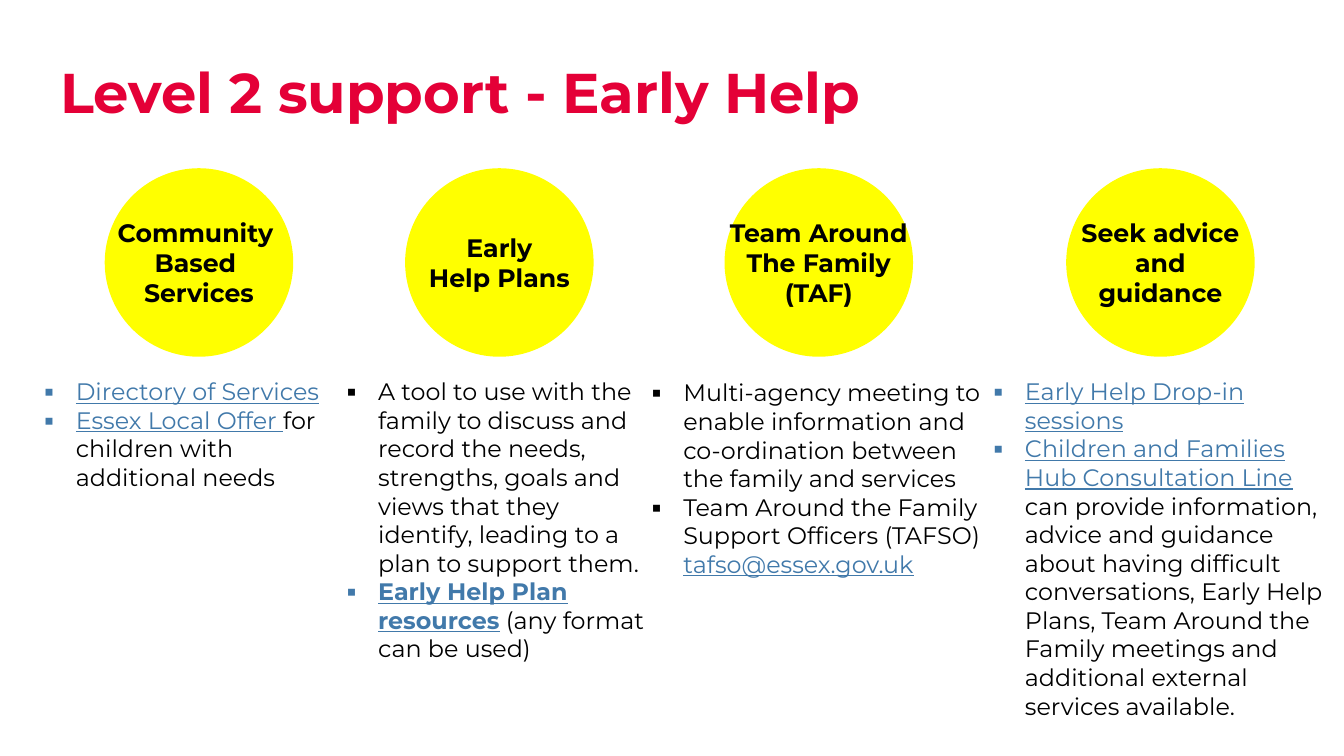
"""Build the Level 2 support slide: four yellow circles above bulleted notes."""
from dataclasses import dataclass

from lxml import etree
from pptx import Presentation
from pptx.dml.color import RGBColor
from pptx.enum.shapes import MSO_SHAPE
from pptx.enum.text import MSO_ANCHOR, MSO_AUTO_SIZE, PP_ALIGN
from pptx.oxml.ns import qn
from pptx.shapes.base import BaseShape
from pptx.slide import Slide
from pptx.text.text import Font, TextFrame, _Paragraph
from pptx.util import Cm, Pt

OVAL = MSO_SHAPE.OVAL
TOP, MIDDLE = MSO_ANCHOR.TOP, MSO_ANCHOR.MIDDLE
LEFT, CENTER = PP_ALIGN.LEFT, PP_ALIGN.CENTER
NO_FIT = MSO_AUTO_SIZE.NONE

RED = RGBColor(0xE4, 0x00, 0x37)
BLUE = RGBColor(0x41, 0x79, 0xAA)
BLACK = RGBColor(0, 0, 0)
YELLOW = RGBColor(0xFF, 0xFF, 0x00)
FACE = "Montserrat"
INDENT = Cm(0.79)


@dataclass
class Part:
    text: str
    link: bool = False
    bold: bool = False


@dataclass
class Column:
    label: str
    disc: float
    left: float
    width: float
    notes: list[list[Part]]
    top: float = 9.5


COLUMNS = [
    Column("Community \nBased \nServices", 2.64, 1.12, 7, [
        [Part("Directory of Services", link=True)],
        [Part("Essex Local Offer ", link=True),
         Part("for children with additional needs")],
    ]),
    Column("Early\nHelp Plans", 10.21, 8.74, 7.7, [
        [Part("A tool to use with the family to discuss and record the needs, "
              "strengths, goals and views that they identify, leading to a "
              "plan to support them.")],
        [Part("Early Help Plan resources", link=True, bold=True),
         Part(" (any format can be used)")],
    ]),
    Column("Team Around\nThe Family\n(TAF)", 18.26, 16.43, 8.43, [
        [Part("Multi-agency meeting to enable information and co-ordination "
              "between the family and services")],
        [Part("Team Around the Family Support Officers (TAFSO) "),
         Part("tafso@essex.gov.uk", link=True)],
    ], top=9.53),
    Column("Seek advice\nand\nguidance", 26.87, 25.04, 8.43, [
        [Part("Early Help Drop-in sessions", link=True)],
        [Part("Children and Families Hub Consultation Line ", link=True),
         Part("can provide information, advice and guidance about having "
              "difficult conversations, Early Help Plans, Team Around the "
              "Family meetings and additional external services available.")],
    ]),
]


def place(shape: BaseShape, left: float, top: float, width: float, height: float) -> None:
    shape.left, shape.top = Cm(left), Cm(top)
    shape.width, shape.height = Cm(width), Cm(height)


def style(font: Font, size: int, color: RGBColor, bold: bool) -> None:
    font.name, font.size, font.bold = FACE, Pt(size), bold
    font.color.rgb = color


def setup(frame: TextFrame) -> None:
    frame.margin_left = frame.margin_right = 0
    frame.margin_top = frame.margin_bottom = 0
    frame.word_wrap = True
    frame.auto_size = NO_FIT
    frame.vertical_anchor = TOP


def space(para: _Paragraph, align: PP_ALIGN) -> None:
    para.alignment = align
    para.line_spacing = 1.0
    para.space_before = para.space_after = Pt(0)


def bullet(para: _Paragraph) -> None:
    props = para._p.get_or_add_pPr()
    props.set("marL", str(INDENT))
    props.set("indent", str(-INDENT))
    etree.SubElement(props, qn("a:buFont")).set("typeface", FACE)
    etree.SubElement(props, qn("a:buChar")).set("char", "▪")


def add_title(slide: Slide) -> None:
    title = slide.shapes.title
    place(title, 1.52, 1.45, 20.57, 2.95)
    frame = title.text_frame
    setup(frame)
    frame.text = "Level 2 support - Early Help"
    para = frame.paragraphs[0]
    space(para, LEFT)
    style(para.runs[0].font, 40, RED, True)


def add_disc(slide: Slide, col: Column) -> None:
    disc = slide.shapes.add_shape(OVAL, Cm(col.disc), Cm(4.24), Cm(4.75), Cm(4.75))
    disc.shadow.inherit = False
    disc.fill.solid()
    disc.fill.fore_color.rgb = YELLOW
    disc.line.fill.background()
    frame = disc.text_frame
    frame.word_wrap = False
    frame.vertical_anchor = MIDDLE
    frame.text = col.label
    for para in frame.paragraphs:
        space(para, CENTER)
        style(para.runs[0].font, 18, BLACK, True)


def add_notes(box: BaseShape, col: Column) -> None:
    place(box, col.left, col.top, col.width, 5.46)
    frame = box.text_frame
    setup(frame)
    for index, note in enumerate(col.notes):
        para = frame.add_paragraph() if index else frame.paragraphs[0]
        space(para, LEFT)
        bullet(para)
        for part in note:
            run = para.add_run()
            run.text = part.text
            style(run.font, 17, BLUE if part.link else BLACK, part.bold)
            run.font.underline = part.link


def main() -> None:
    deck = Presentation()
    deck.slide_width, deck.slide_height = Cm(33.87), Cm(19.05)
    slide = deck.slides.add_slide(deck.slide_layouts[1])
    add_title(slide)
    for index, col in enumerate(COLUMNS):
        box = slide.shapes.add_textbox(0, 0, 0, 0) if index else slide.placeholders[1]
        add_notes(box, col)
    for col in COLUMNS:
        add_disc(slide, col)
    deck.save("out.pptx")


if __name__ == "__main__":
    main()
